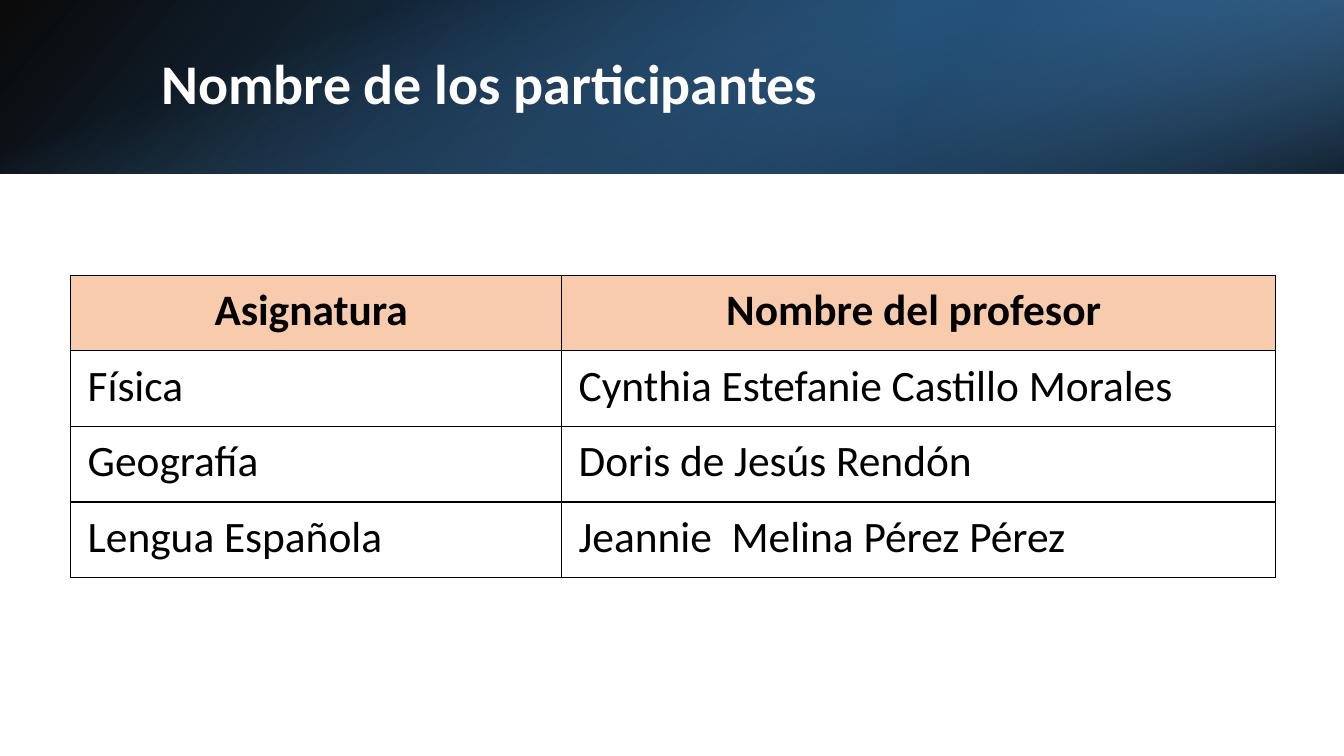
from dataclasses import dataclass

from pptx import Presentation
from pptx.dml.color import RGBColor
from pptx.enum.shapes import MSO_SHAPE
from pptx.enum.text import MSO_ANCHOR, PP_ALIGN
from pptx.oxml import parse_xml
from pptx.oxml.ns import nsdecls, qn
from pptx.oxml.xmlchemy import OxmlElement
from pptx.util import Pt

RECTANGLE = MSO_SHAPE.RECTANGLE
MIDDLE = MSO_ANCHOR.MIDDLE
LEFT, CENTER = PP_ALIGN.LEFT, PP_ALIGN.CENTER
TITLE_ONLY = 5
SLIDE_W, SLIDE_H = 1333, 750


@dataclass(frozen=True)
class Theme:
    font: str = "Calibri"
    title_size: int = 40
    table_size: int = 31
    border_width: int = 1
    white: str = "FFFFFF"
    black: str = "000000"
    header: str = "F8CBAD"
    navy: str = "1F4E79"
    blue: str = "2E75B6"
    sky: str = "5B9BD5"


THEME = Theme()

HEADINGS = ("Asignatura ", "Nombre del profesor ")
TEACHERS = (
    ("Física", "Cynthia Estefanie Castillo Morales"),
    ("Geografía", "Doris de Jesús Rendón"),
    ("Lengua Española", "Jeannie  Melina Pérez Pérez"),
)


def px(n):
    """Turn px, 100 to the inch, into EMU."""
    return n * 9144


def rgb(value):
    return RGBColor.from_string(value)


def style(p, size, color, bold, align):
    p.font.name = THEME.font
    p.font.size = Pt(size)
    p.font.bold = bold
    p.font.color.rgb = rgb(color)
    p.alignment = align


def gradient_band(slide, box, stops, angle, rotation=0, flip=False):
    """Cover box with a gradient; stops are (percent, colour, opacity percent)."""
    x, y, w, h = (px(n) for n in box)
    if rotation % 180:
        x, y, w, h = x + (w - h) // 2, y + (h - w) // 2, h, w
    sp = slide.shapes.add_shape(RECTANGLE, x, y, w, h)
    sp.shadow.inherit = False
    sp.line.fill.background()
    sp.rotation = rotation
    if flip:
        sp._element.spPr.find(qn("a:xfrm")).set("flipH", "1")
    sp.fill.gradient()
    sp.fill.gradient_angle = 360 - angle
    for stop, (position, color, _) in zip(sp.fill.gradient_stops, stops):
        stop.position = position / 100
        stop.color.rgb = rgb(color)
    colors = sp._element.spPr.find(qn("a:gradFill")).iter(qn("a:srgbClr"))
    for color, (_, _, opacity) in zip(colors, stops):
        alpha = OxmlElement("a:alpha")
        alpha.set("val", str(opacity * 1000))
        color.append(alpha)


def header(slide, box, text):
    x, y, w, h = box
    t = THEME
    third = w // 3
    gradient_band(slide, box, ((0, t.black, 96), (100, t.blue, 100)), 140, flip=True)
    gradient_band(slide, (x + w - third, y, third, h),
                  ((19, t.navy, 68), (100, t.sky, 79)), 320, rotation=180, flip=True)
    gradient_band(slide, box, ((23, t.sky, 0), (99, t.black, 74)), 340, rotation=90)

    title = slide.shapes.title
    title.left, title.top = px(x + 150), px(y + 38)
    title.width, title.height = px(w - 235), px(96)
    slide.shapes._spTree.append(title._element)  # in front of the bands
    tf = title.text_frame
    tf.text = text
    tf.vertical_anchor = MIDDLE
    p = tf.paragraphs[0]
    p.line_spacing = 0.9
    style(p, t.title_size, t.white, True, LEFT)


def set_borders(cell):
    tc_pr = cell._tc.get_or_add_tcPr()
    for i, side in enumerate(("lnL", "lnR", "lnT", "lnB")):
        tc_pr.insert(i, parse_xml(
            f'<a:{side} {nsdecls("a")} w="{Pt(THEME.border_width)}"><a:solidFill>'
            f'<a:srgbClr val="{THEME.black}"/></a:solidFill></a:{side}>'))


def teacher_table(slide, box, first_col):
    x, y, w, h = box
    rows = (HEADINGS, *TEACHERS)
    table = slide.shapes.add_table(
        len(rows), len(HEADINGS), px(x), px(y), px(w), px(h)).table
    table.horz_banding = False
    for column, width in zip(table.columns, (first_col, w - first_col)):
        column.width = px(width)
    for r, row in enumerate(rows):
        table.rows[r].height = px(h // len(rows))
        is_header = r == 0
        for c, text in enumerate(row):
            cell = table.cell(r, c)
            cell.text = text
            cell.margin_left = cell.margin_right = px(17)
            cell.margin_top = cell.margin_bottom = px(9)
            if is_header:
                cell.fill.solid()
                cell.fill.fore_color.rgb = rgb(THEME.header)
            else:
                cell.fill.background()
            set_borders(cell)
            style(cell.text_frame.paragraphs[0], THEME.table_size, THEME.black,
                  is_header, CENTER if is_header else LEFT)


def main():
    prs = Presentation()
    prs.slide_width, prs.slide_height = px(SLIDE_W), px(SLIDE_H)
    slide = prs.slides.add_slide(prs.slide_layouts[TITLE_ONLY])
    header(slide, (0, 0, SLIDE_W, 172), "Nombre de los participantes")
    teacher_table(slide, (70, 273, 1195, 300), first_col=487)
    prs.save("out.pptx")


if __name__ == "__main__":
    main()
